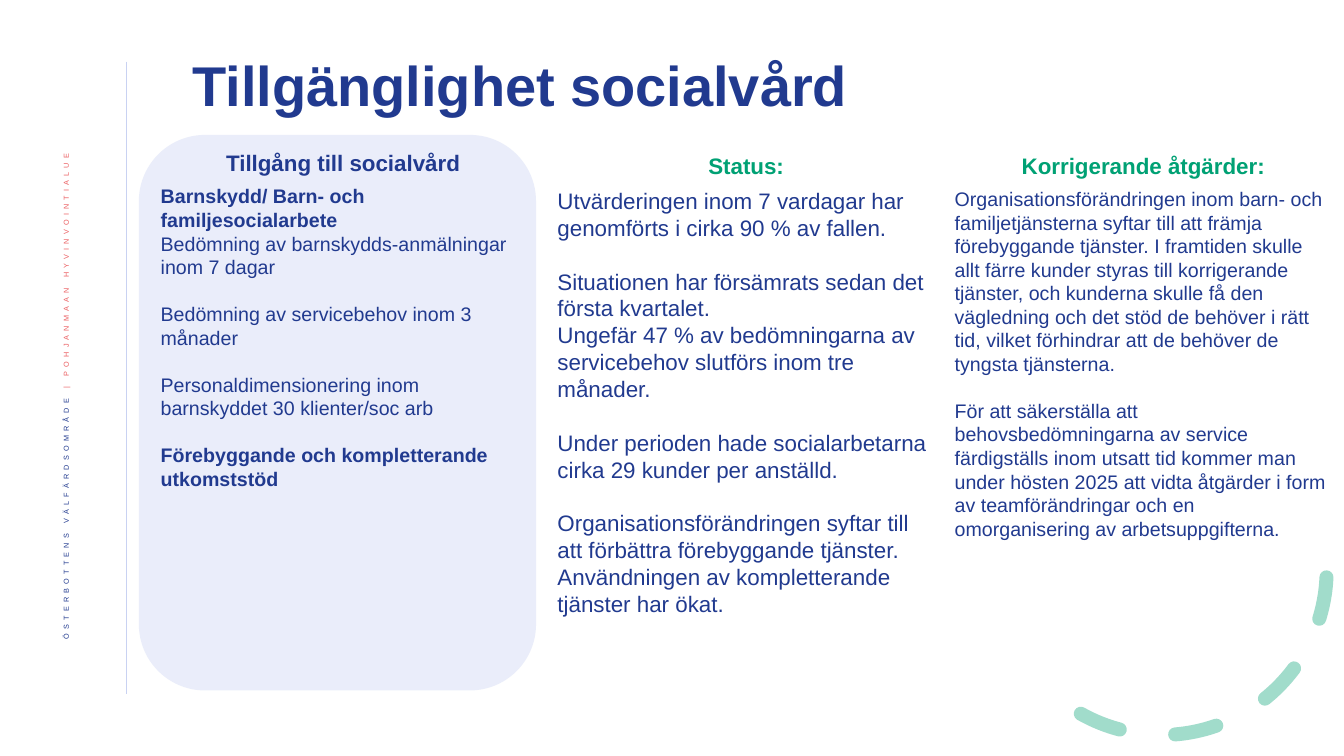
from lxml import etree
from pptx import Presentation
from pptx.dml.color import RGBColor
from pptx.enum.shapes import MSO_CONNECTOR, MSO_SHAPE
from pptx.enum.text import MSO_ANCHOR, MSO_AUTO_SIZE, PP_ALIGN
from pptx.oxml.ns import qn
from pptx.util import Cm, Pt

STRAIGHT = MSO_CONNECTOR.STRAIGHT
ROUNDED, ARC = MSO_SHAPE.ROUNDED_RECTANGLE, MSO_SHAPE.ARC
MIDDLE, TOP = MSO_ANCHOR.MIDDLE, MSO_ANCHOR.TOP
NO_FIT, GROW = MSO_AUTO_SIZE.NONE, MSO_AUTO_SIZE.SHAPE_TO_FIT_TEXT
LEFT, CENTER, RIGHT = PP_ALIGN.LEFT, PP_ALIGN.CENTER, PP_ALIGN.RIGHT

COLORS = {"navy": "213A8F", "green": "00A174", "coral": "EB5C5F", "lavender": "C9D2F2"}
FONT = "Arial"
LINE_PITCH = 1.2  # height of a text line relative to its font size

# Each column: box in cm, heading colour, heading line spacing, body size, heading,
# then body paragraphs as (text, bold, one empty line above)
COLUMNS = [
    ((3.8, 3.7, 9.7, 9.47), "navy", 0.9, 14, "Tillgång till socialvård", [
        ("Barnskydd/ Barn- och familjesocialarbete", True, False),
        ("Bedömning av barnskydds-anmälningar inom 7 dagar", False, False),
        ("Bedömning av servicebehov inom 3 månader", False, True),
        ("Personaldimensionering inom barnskyddet 30 klienter/soc arb", False, True),
        ("Förebyggande och kompletterande utkomststöd", True, True),
    ]),
    ((13.8, 3.7, 10.01, 12.09), "green", 1.0, 16, "Status:", [
        ("Utvärderingen inom 7 vardagar har genomförts i cirka 90 % av fallen.", False, False),
        ("Situationen har försämrats sedan det första kvartalet.", False, True),
        ("Ungefär 47 % av bedömningarna av servicebehov slutförs inom tre månader.", False, False),
        ("Under perioden hade socialarbetarna cirka 29 kunder per anställd.", False, True),
        ("Organisationsförändringen syftar till att förbättra förebyggande tjänster. "
         "Användningen av kompletterande tjänster har ökat.", False, True),
    ]),
    ((23.81, 3.7, 10.01, 10.13), "green", 1.0, 14, "Korrigerande åtgärder:", [
        ("Organisationsförändringen inom barn- och familjetjänsterna syftar till att främja "
         "förebyggande tjänster. I framtiden skulle allt färre kunder styras till korrigerande "
         "tjänster, och kunderna skulle få den vägledning och det stöd de behöver i rätt tid, "
         "vilket förhindrar att de behöver de tyngsta tjänsterna.", False, False),
        ("För att säkerställa att behovsbedömningarna av service färdigställs inom utsatt tid "
         "kommer man under hösten 2025 att vidta åtgärder i form av teamförändringar och en "
         "omorganisering av arbetsuppgifterna.", False, True),
    ]),
]


def in_cm(box):
    return [Cm(length) for length in box]


def set_alpha(color_format_parent, percent):
    """Make the solid colour inside a fill or line element translucent."""
    color = color_format_parent.find(".//" + qn("a:srgbClr"))
    etree.SubElement(color, qn("a:alpha")).set("val", str(percent * 1000))


def add_run(paragraph, text, size=14, color="navy", bold=False):
    run = paragraph.add_run()
    run.text = text
    run.font.name = FONT
    run.font.size = Pt(size)
    run.font.bold = bold
    run.font.color.rgb = RGBColor.from_string(COLORS[color])
    return run


def add_paragraph(frame, text, align=LEFT, spacing=1.0, before=0, after=0, **run_format):
    """Write into the first paragraph while it is empty, otherwise append one."""
    first = frame.paragraphs[0]
    paragraph = frame.add_paragraph() if first.runs else first
    paragraph.alignment = align
    paragraph.line_spacing = spacing
    paragraph.space_before, paragraph.space_after = Pt(before), Pt(after)
    return add_run(paragraph, text, **run_format)


def set_up_frame(shape, anchor, auto_size):
    frame = shape.text_frame
    frame.word_wrap = True
    frame.auto_size = auto_size
    frame.vertical_anchor = anchor
    return frame


def add_title(slide, box, text):
    title = slide.shapes.title
    title.left, title.top, title.width, title.height = in_cm(box)
    frame = set_up_frame(title, MIDDLE, NO_FIT)
    add_paragraph(frame, text, spacing=0.9, size=40, bold=True)


def add_side_rule(slide, x, top, bottom):
    rule = slide.shapes.add_connector(STRAIGHT, Cm(x), Cm(top), Cm(x), Cm(bottom))
    rule.line.color.rgb = RGBColor.from_string(COLORS["lavender"])
    rule.line.width = Pt(0.5)
    etree.SubElement(rule._element.spPr, qn("a:effectLst"))


def add_side_label(slide, box):
    """Place the raised, widely spaced label that reads upwards."""
    label = slide.shapes.add_textbox(*in_cm(box))
    frame = set_up_frame(label, MIDDLE, NO_FIT)
    frame._txBody.bodyPr.set("vert", "vert270")
    swedish = add_paragraph(frame, "ÖSTERBOTTENS VÄLFÄRDSOMRÅDE ", align=RIGHT, spacing=0.9, size=9)
    finnish = add_run(frame.paragraphs[0], "| POHJANMAAN HYVINVOINTIALUE ", size=9, color="coral")
    for run in (swedish, finnish):
        properties = run._r.get_or_add_rPr()
        properties.set("baseline", "30000")
        properties.set("spc", "300")


def add_dashed_arc(slide, box):
    """Draw the quarter-like arc in the lower right corner of its box."""
    arc = slide.shapes.add_shape(ARC, *in_cm(box))
    arc.shadow.inherit = False
    arc.rotation = 98.9
    arc.adjustments[0], arc.adjustments[1] = 158.17, 17.81
    arc.fill.background()
    arc.line.color.rgb = RGBColor.from_string(COLORS["green"])
    arc.line.width = Pt(10)
    line = arc.line._get_or_add_ln()
    line.set("cap", "rnd")
    set_alpha(line, 36)
    etree.SubElement(line, qn("a:prstDash")).set("val", "dash")
    etree.SubElement(line, qn("a:round"))


def add_panel(slide, box):
    panel = slide.shapes.add_shape(ROUNDED, *in_cm(box))
    panel.shadow.inherit = False
    panel.fill.solid()
    panel.fill.fore_color.rgb = RGBColor.from_string(COLORS["lavender"])
    set_alpha(panel._element.spPr, 38)
    panel.line.fill.background()


def add_column(slide, box, heading_color, heading_spacing, size, heading, body):
    frame = set_up_frame(slide.shapes.add_textbox(*in_cm(box)), TOP, GROW)
    add_paragraph(frame, heading, align=CENTER, spacing=heading_spacing, after=6,
                  size=16, color=heading_color, bold=True)
    for text, bold, gap in body:
        before = size * LINE_PITCH if gap else 0
        add_paragraph(frame, text, before=before, size=size, bold=bold)


def main():
    presentation = Presentation()
    presentation.slide_width, presentation.slide_height = Cm(33.87), Cm(19.05)
    slide = presentation.slides.add_slide(presentation.slide_layouts[5])
    add_side_rule(slide, 3.18, 1.55, 17.48)
    add_side_label(slide, (1.07, 3.47, 1.32, 14.55))
    add_dashed_arc(slide, (25.12, 10.21, 8.31, 8.31))
    add_title(slide, (4.6, 1.14, 25.91, 2.16), "Tillgänglighet socialvård")
    add_panel(slide, (3.5, 3.4, 10.01, 14))
    for column in COLUMNS:
        add_column(slide, *column)
    presentation.save("out.pptx")


if __name__ == "__main__":
    main()
